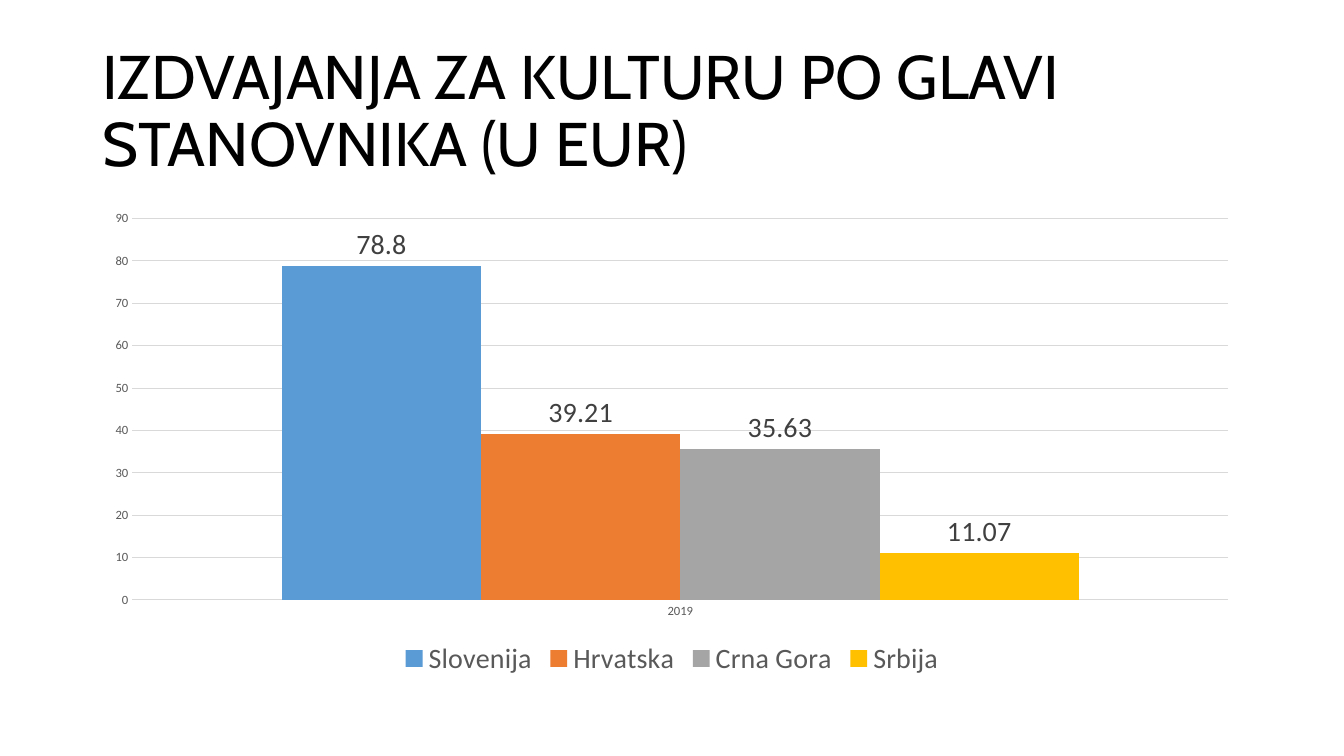
from dataclasses import dataclass

from pptx import Presentation
from pptx.chart.axis import CategoryAxis, ValueAxis
from pptx.chart.chart import Chart
from pptx.chart.data import CategoryChartData
from pptx.dml.color import RGBColor
from pptx.dml.line import LineFormat
from pptx.enum.chart import XL_CHART_TYPE, XL_LABEL_POSITION, XL_LEGEND_POSITION, XL_TICK_MARK
from pptx.enum.text import MSO_ANCHOR, PP_ALIGN
from pptx.slide import Slide
from pptx.text.text import Font
from pptx.util import Emu, Pt

EMU_PER_PX = 9525
BLANK_LAYOUT = 6

BLACK = RGBColor(0x00, 0x00, 0x00)
AXIS_GREY = RGBColor(0x59, 0x59, 0x59)
LABEL_GREY = RGBColor(0x40, 0x40, 0x40)
GRID_GREY = RGBColor(0xD9, 0xD9, 0xD9)
BLUE = RGBColor(0x5B, 0x9B, 0xD5)
ORANGE = RGBColor(0xED, 0x7D, 0x31)
GREY = RGBColor(0xA5, 0xA5, 0xA5)
GOLD = RGBColor(0xFF, 0xC0, 0x00)

CLUSTERED = XL_CHART_TYPE.COLUMN_CLUSTERED
OUTSIDE_END = XL_LABEL_POSITION.OUTSIDE_END
LEGEND_BOTTOM = XL_LEGEND_POSITION.BOTTOM
NO_TICK = XL_TICK_MARK.NONE
MIDDLE = MSO_ANCHOR.MIDDLE
LEFT = PP_ALIGN.LEFT

TITLE = "IZDVAJANJA ZA KULTURU PO GLAVI STANOVNIKA (U EUR)"
YEAR = "2019"


@dataclass(frozen=True)
class Country:
    name: str
    spending: float
    color: RGBColor


COUNTRIES = [
    Country("Slovenija", 78.8, BLUE),
    Country("Hrvatska", 39.21, ORANGE),
    Country("Crna Gora", 35.63, GREY),
    Country("Srbija", 11.07, GOLD),
]


def px(length: int) -> Emu:
    return Emu(length * EMU_PER_PX)


def style_font(font: Font, name: str, size: int, color: RGBColor) -> None:
    font.name = name
    font.size = Pt(size)
    font.bold = False
    font.color.rgb = color


def style_line(line: LineFormat) -> None:
    line.color.rgb = GRID_GREY
    line.width = Pt(0.75)


def style_axis(axis: CategoryAxis | ValueAxis) -> None:
    axis.major_tick_mark = NO_TICK
    axis.minor_tick_mark = NO_TICK
    style_font(axis.tick_labels.font, "Calibri", 9, AXIS_GREY)


def add_title(page: Slide) -> None:
    box = page.shapes.add_textbox(px(88), px(38), px(1104), px(139))
    frame = box.text_frame
    frame.word_wrap = True
    frame.vertical_anchor = MIDDLE
    para = frame.paragraphs[0]
    para.text = TITLE
    para.alignment = LEFT
    para.line_spacing = 0.9
    style_font(para.font, "Cabin", 44, BLACK)


def style_axes(chart: Chart) -> None:
    style_axis(chart.category_axis)
    style_line(chart.category_axis.format.line)

    value_axis = chart.value_axis
    style_axis(value_axis)
    value_axis.minimum_scale = 0
    value_axis.maximum_scale = 90
    value_axis.major_unit = 10
    value_axis.format.line.fill.background()
    value_axis.has_major_gridlines = True
    style_line(value_axis.major_gridlines.format.line)


def style_columns(chart: Chart) -> None:
    plot = chart.plots[0]
    plot.gap_width = 150
    plot.overlap = 0
    plot.vary_by_categories = False
    for series, country in zip(plot.series, COUNTRIES):
        series.format.fill.solid()
        series.format.fill.fore_color.rgb = country.color
        labels = series.data_labels
        labels.show_value = True
        labels.position = OUTSIDE_END
        style_font(labels.font, "Calibri", 20, LABEL_GREY)


def add_spending_chart(page: Slide) -> None:
    data = CategoryChartData()
    data.categories = [YEAR]
    for country in COUNTRIES:
        data.add_series(country.name, [country.spending])

    frame = page.shapes.add_chart(CLUSTERED, px(88), px(192), px(1104), px(457), data)
    chart = frame.chart
    chart.has_title = False
    style_font(chart.font, "Calibri", 10, BLACK)
    style_axes(chart)
    style_columns(chart)

    chart.has_legend = True
    chart.legend.position = LEGEND_BOTTOM
    chart.legend.include_in_layout = False
    style_font(chart.legend.font, "Calibri", 20, AXIS_GREY)


def main() -> None:
    deck = Presentation()
    deck.slide_width = px(1280)
    deck.slide_height = px(720)
    page = deck.slides.add_slide(deck.slide_layouts[BLANK_LAYOUT])
    add_title(page)
    add_spending_chart(page)
    deck.save("out.pptx")


if __name__ == "__main__":
    main()
